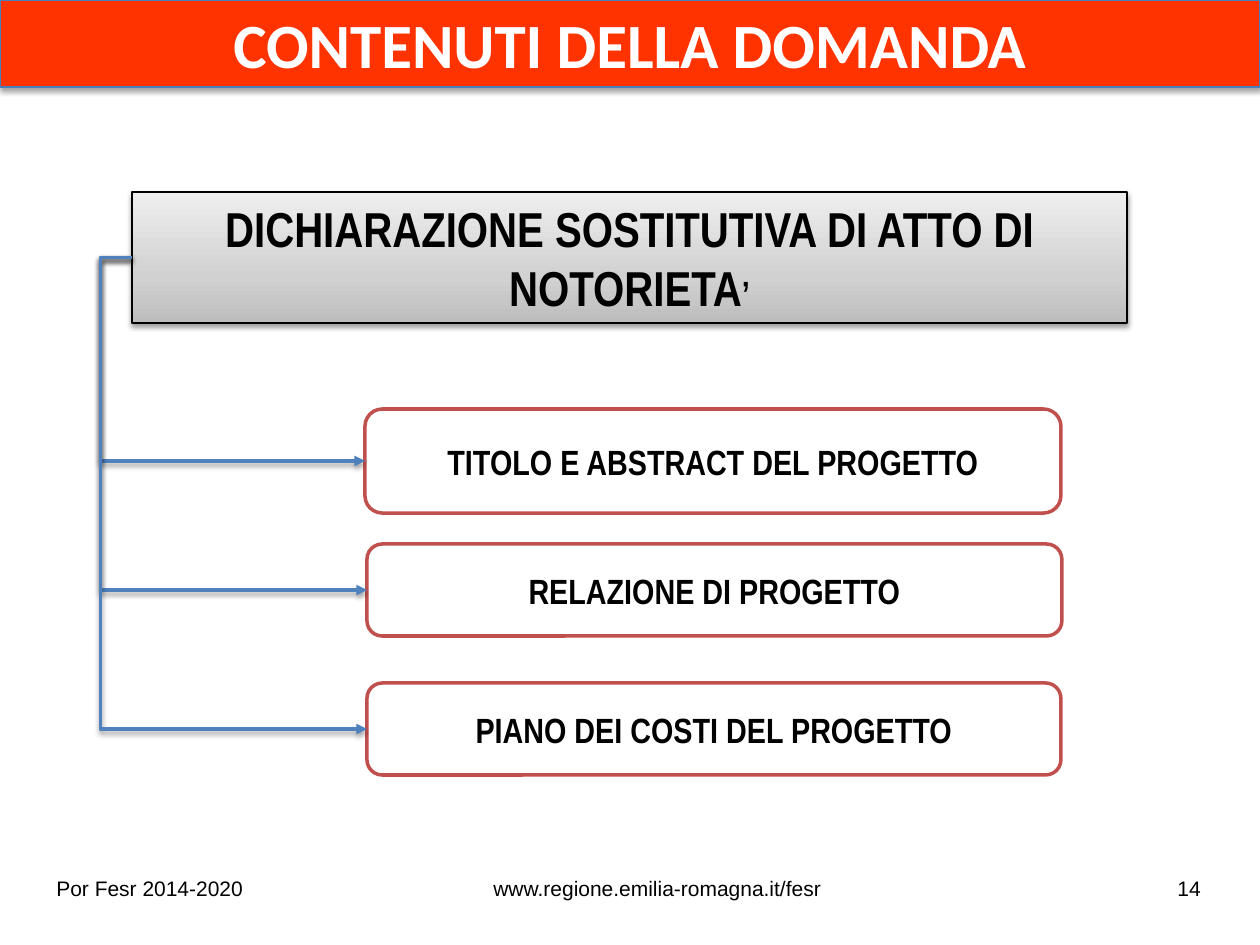
import copy

import pptx
import pptx.util
import pptx.dml.color
import pptx.enum.dml
import pptx.enum.shapes
import pptx.enum.text
import pptx.oxml.ns
from lxml import etree

EMU_PER_PX = 914400 / 126
RGBColor = pptx.dml.color.RGBColor
MSO_SHAPE = pptx.enum.shapes.MSO_SHAPE
MSO_ANCHOR = pptx.enum.text.MSO_ANCHOR
PP_ALIGN = pptx.enum.text.PP_ALIGN
qn = pptx.oxml.ns.qn

BLACK = RGBColor(0x00, 0x00, 0x00)
WHITE = RGBColor(0xFF, 0xFF, 0xFF)
ORANGE = RGBColor(0xFF, 0x33, 0x00)
TITLE_EDGE = RGBColor(0x4B, 0x7E, 0xBC)
BLUE = RGBColor(0x4F, 0x81, 0xBD)
RED = RGBColor(0xC0, 0x50, 0x4D)
GREYS = [
    (0, RGBColor(0xBD, 0xBD, 0xBD)),
    (0.35, RGBColor(0xD1, 0xD1, 0xD1)),
    (1, RGBColor(0xEE, 0xEE, 0xEE)),
]

SECTIONS = [
    ("TITOLO E ABSTRACT DEL PROGETTO", 365, 409, 696, 104),
    ("RELAZIONE DI PROGETTO", 367, 544, 695, 92),
    ("PIANO DEI COSTI DEL PROGETTO", 367, 683, 694, 92),
]
FOOTERS = [
    ("Por Fesr 2014-2020", 44, 214),
    ("www.regione.emilia-romagna.it/fesr", 481, 357),
    ("14", 1165, 57),
]


def px(n):
    return pptx.util.Emu(round(n * EMU_PER_PX))


def box(*lengths):
    return [px(n) for n in lengths]


def set_line(sp, color, width):
    sp.line.color.rgb = color
    sp.line.width = pptx.util.Pt(width)


def set_fill(sp, color):
    sp.fill.solid()
    sp.fill.fore_color.rgb = color


def style_run(r, font, size, color, bold=False):
    r.font.name = font
    r.font.size = pptx.util.Pt(size)
    r.font.color.rgb = color
    r.font.bold = bold


def set_text(sp, text, font, size, color, anchor=MSO_ANCHOR.MIDDLE):
    tf = sp.text_frame
    tf.text = text
    tf.word_wrap = True
    tf.vertical_anchor = anchor
    p = tf.paragraphs[0]
    p.alignment = PP_ALIGN.CENTER
    style_run(p.runs[0], font, size, color, True)
    return p


def add_shadow(sp, opacity, distance):
    effects = etree.SubElement(sp._element.spPr, qn("a:effectLst"))
    shadow = etree.SubElement(
        effects, qn("a:outerShdw"), blurRad=str(pptx.util.Pt(3.1)),
        dist=str(pptx.util.Pt(distance)), dir="5400000", rotWithShape="0")
    color = etree.SubElement(shadow, qn("a:srgbClr"), val=str(BLACK))
    etree.SubElement(color, qn("a:alpha"), val=str(opacity * 1000))


def add_title(s):
    sp = s.shapes.title
    sp.left, sp.top, sp.width, sp.height = box(0, 0, 1260, 87)
    set_fill(sp, ORANGE)
    set_line(sp, TITLE_EDGE, 0.75)
    add_shadow(sp, 35, 1.8)
    set_text(sp, "CONTENUTI DELLA DOMANDA", "Calibri", 36, WHITE)
    sp.text_frame.auto_size = pptx.enum.text.MSO_AUTO_SIZE.NONE


def add_declaration(s):
    sp = s.shapes.add_shape(MSO_SHAPE.RECTANGLE, *box(132, 192, 995, 131))
    sp.fill.gradient()
    sp.fill.gradient_angle = 90
    stops = sp._element.spPr.find(qn("a:gradFill")).find(qn("a:gsLst"))
    stops.append(copy.deepcopy(stops[-1]))
    for stop, (position, color) in zip(sp.fill.gradient_stops, GREYS):
        stop.position = position
        stop.color.rgb = color
    set_line(sp, BLACK, 0.75)
    add_shadow(sp, 38, 1.6)
    p = set_text(sp, "DICHIARAZIONE SOSTITUTIVA DI ATTO DI NOTORIETA",
                 "Arial Narrow", 28, BLACK, MSO_ANCHOR.TOP)
    r = p.add_run()
    r.text = "’"
    style_run(r, "Arial Narrow", 20, BLACK, True)
    return sp


def add_section(s, text, *place):
    sp = s.shapes.add_shape(MSO_SHAPE.FLOWCHART_ALTERNATE_PROCESS, *box(*place))
    sp.shadow.inherit = False
    set_fill(sp, WHITE)
    set_line(sp, RED, 2)
    set_text(sp, text, "Arial Narrow", 20, BLACK)
    return sp


def add_branch(s, start, end):
    line = s.shapes.add_connector(
        pptx.enum.shapes.MSO_CONNECTOR.ELBOW, 0, 0, 0, 0)
    line.begin_connect(start, 1)
    line.end_connect(end, 1)
    set_line(line, BLUE, 2)
    spPr = line._element.spPr
    guides = spPr.find(qn("a:prstGeom")).find(qn("a:avLst"))
    etree.SubElement(guides, qn("a:gd"), name="adj1", fmla="val -13500")
    etree.SubElement(spPr.find(qn("a:ln")), qn("a:tailEnd"), type="triangle")
    add_shadow(line, 38, 1.6)


def add_footer(s, text, left, width):
    sp = s.shapes.add_textbox(*box(left, 869, width, 38))
    tf = sp.text_frame
    tf.text = text
    tf.word_wrap = False
    style_run(tf.paragraphs[0].runs[0], "Arial", 12, BLACK)


def main():
    prs = pptx.Presentation()
    prs.slide_width, prs.slide_height = box(1260, 945)
    s = prs.slides.add_slide(prs.slide_layouts[5])
    for footer in FOOTERS:
        add_footer(s, *footer)
    add_title(s)
    declaration = add_declaration(s)
    for section in SECTIONS:
        add_branch(s, declaration, add_section(s, *section))
    prs.save("out.pptx")


if __name__ == "__main__":
    main()
